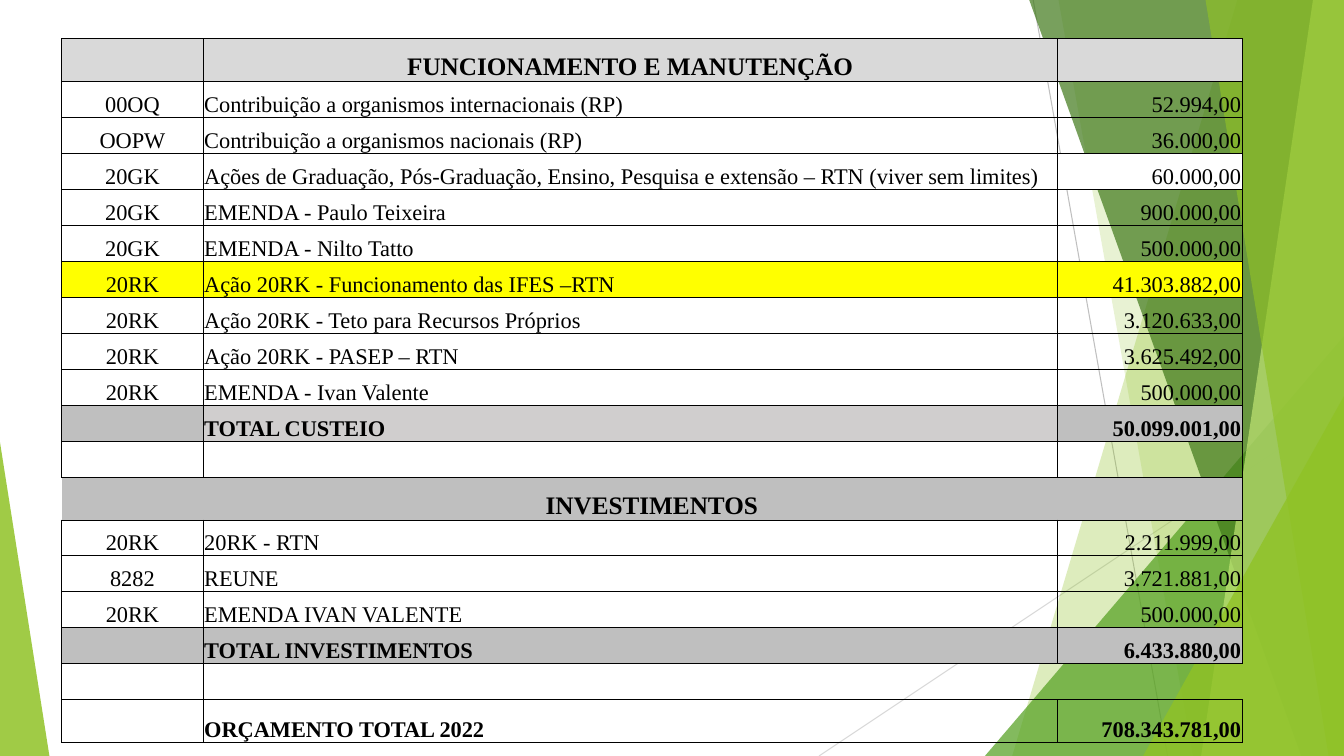
from lxml.etree import SubElement
from pptx import Presentation
from pptx.dml.color import RGBColor
from pptx.enum.shapes import MSO_CONNECTOR as CONN, MSO_SHAPE as SHAPE
from pptx.enum.text import MSO_ANCHOR as ANCHOR, PP_ALIGN as ALIGN
from pptx.oxml.ns import qn
from pptx.util import Pt

BLACK = RGBColor(0x00, 0x00, 0x00)
WHITE = RGBColor(0xFF, 0xFF, 0xFF)
YELLOW = RGBColor(0xFF, 0xFF, 0x00)
SILVER = RGBColor(0xD9, 0xD9, 0xD9)
GRAY = RGBColor(0xBF, 0xBF, 0xBF)
WARM_GRAY = RGBColor(0xD0, 0xCE, 0xCE)
LIME = RGBColor(0x90, 0xC2, 0x26)
GREEN = RGBColor(0x54, 0xA0, 0x21)
DARK_GREEN = RGBColor(0x3F, 0x78, 0x19)
PALE_LIME = RGBColor(0xC0, 0xE4, 0x74)
NO_STYLE = "{2D5ABB26-0587-4C30-8999-92F81FD0307C}"


def paint(s, color, alpha):
    s.shadow.inherit = False
    s.line.fill.background()
    s.fill.solid()
    s.fill.fore_color.rgb = color
    clr = s._element.spPr.find(qn("a:solidFill"))[0]
    SubElement(clr, qn("a:alpha"), val=str(alpha * 1000))


def set_borders(cell, sides):
    tcPr = cell._tc.get_or_add_tcPr()
    for side in "LRTB":
        ln = SubElement(tcPr, qn(f"a:ln{side}"), w=str(Pt(0.5)))
        if side in sides:
            fill = SubElement(ln, qn("a:solidFill"))
            SubElement(fill, qn("a:srgbClr"), val=str(BLACK))
        else:
            SubElement(ln, qn("a:noFill"))


prs = Presentation()
prs.slide_width, prs.slide_height = Pt(960), Pt(540)
slide = prs.slides.add_slide(prs.slide_layouts[6])
shapes = slide.shapes

for x1, y1, x2, y2, color in [(738, 0, 834, 540, GRAY), (960, 290, 585, 540, SILVER)]:
    c = shapes.add_connector(CONN.STRAIGHT, Pt(x1), Pt(y1), Pt(x2), Pt(y2))
    c.line.color.rgb = color
    c.line.width = Pt(0.75)
    SubElement(c._element.spPr, qn("a:effectLst"))

facets = [
    ("band", (884, 723), LIME, 30),
    ("band", (756, 852), LIME, 20),
    ("triangle", (703.5, 240, 256.5, 300, 1), GREEN, 72),
    ("band", (735, 929.5), DARK_GREEN, 70),
    ("band", (938, 858), PALE_LIME, 70),
    ("band", (861, 949), LIME, 65),
    ("triangle", (816.5, 283, 143.5, 257, 1), LIME, 80),
    ("triangle", (0, 316, 35.3, 224, 0), LIME, 85),
]
for kind, geometry, color, alpha in facets:
    if kind == "band":
        top, bottom = geometry
        fb = shapes.build_freeform(Pt(top), Pt(-0.6))
        fb.add_line_segments([(Pt(960), Pt(-0.6)), (Pt(960), Pt(540)), (Pt(bottom), Pt(540))])
        s = fb.convert_to_shape()
    else:
        *box, apex = geometry
        s = shapes.add_shape(SHAPE.ISOSCELES_TRIANGLE, *map(Pt, box))
        s.adjustments[0] = apex
    paint(s, color, alpha)

rows = [
    ("", "FUNCIONAMENTO E MANUTENÇÃO", "", SILVER),
    ("00OQ", "Contribuição a organismos internacionais (RP)", "52.994,00", None),
    ("OOPW", "Contribuição a organismos nacionais (RP)", "36.000,00", None),
    ("20GK", "Ações de Graduação, Pós-Graduação, Ensino, Pesquisa e extensão – RTN (viver sem limites)",
     "60.000,00", WHITE),
    ("20GK", "EMENDA - Paulo Teixeira", "900.000,00", None),
    ("20GK", "EMENDA - Nilto Tatto", "500.000,00", None),
    ("20RK", "Ação 20RK - Funcionamento das IFES –RTN", "41.303.882,00", YELLOW),
    ("20RK", "Ação 20RK - Teto para Recursos Próprios", "3.120.633,00", None),
    ("20RK", "Ação 20RK - PASEP – RTN", "3.625.492,00", None),
    ("20RK", "EMENDA - Ivan Valente", "500.000,00", None),
    ("", "TOTAL CUSTEIO", "50.099.001,00", GRAY),
    ("", "", "", None),
    ("INVESTIMENTOS", "", "", GRAY),
    ("20RK", "20RK - RTN", "2.211.999,00", None),
    ("8282", "REUNE", "3.721.881,00", None),
    ("20RK", "EMENDA IVAN VALENTE", "500.000,00", None),
    ("", "TOTAL INVESTIMENTOS", "6.433.880,00", GRAY),
    ("", "", "", None),
    ("", "ORÇAMENTO TOTAL 2022", "708.343.781,00", None),
]
headings = ("FUNCIONAMENTO E MANUTENÇÃO", "INVESTIMENTOS")
tall_rows = (0, 12, 18)
fills = {(10, 1): WARM_GRAY}
borders = {(12, 0): "RTB", (12, 1): "RTB", (12, 2): "RTB", (17, 1): "LTB", (17, 2): "TB"}
aligns = (ALIGN.CENTER, ALIGN.LEFT, ALIGN.RIGHT)
cell_format = {"margin_left": Pt(0.7), "margin_right": Pt(0.7), "margin_top": Pt(0.7),
               "margin_bottom": 0, "vertical_anchor": ANCHOR.BOTTOM}

frame = shapes.add_table(len(rows), 3, Pt(44), Pt(27.4), Pt(843), Pt(503.3))
table = frame.table
table.first_row = table.horz_banding = False
table._tbl.tblPr[0].text = NO_STYLE
for col, width in zip(table.columns, (101.2, 610, 132)):
    col.width = Pt(width)

for i, (*texts, row_fill) in enumerate(rows):
    table.rows[i].height = Pt(30.7 if i in tall_rows else 25.7)
    for j, text in enumerate(texts):
        cell = table.cell(i, j)
        for name, value in cell_format.items():
            setattr(cell, name, value)
        set_borders(cell, borders.get((i, j), "LRTB"))
        color = fills.get((i, j), row_fill)
        if color is None:
            cell.fill.background()
        else:
            cell.fill.solid()
            cell.fill.fore_color.rgb = color
        if text:
            p = cell.text_frame.paragraphs[0]
            p.alignment = ALIGN.CENTER if text in headings else aligns[j]
            r = p.add_run()
            r.text = text
            r.font.color.rgb = BLACK
            font_format = {"name": "Times New Roman", "size": Pt(18 if text in headings else 16),
                           "bold": text in headings or not texts[0]}
            for name, value in font_format.items():
                setattr(r.font, name, value)
table.cell(12, 0).merge(table.cell(12, 2))

prs.save("out.pptx")
